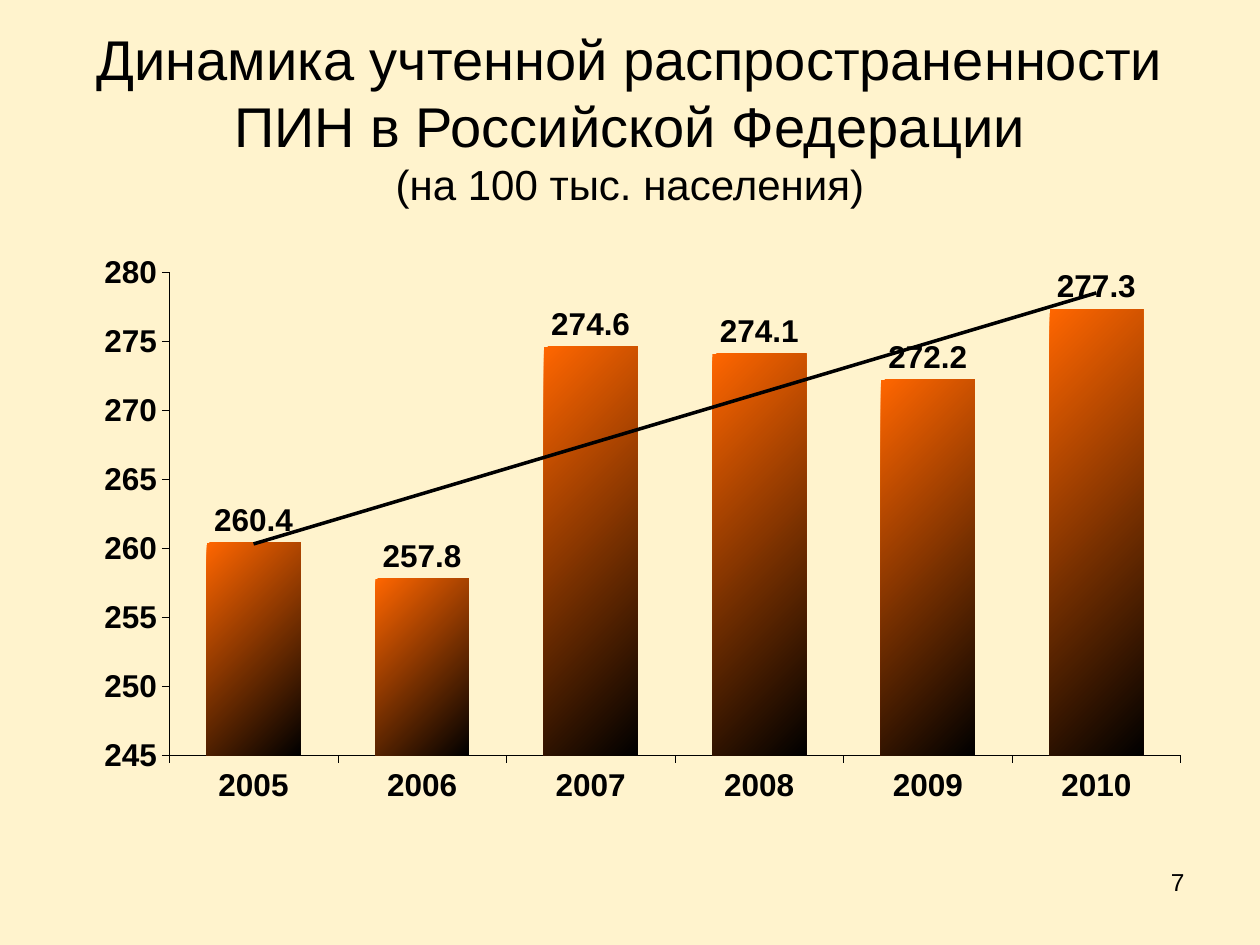
from lxml import etree
from pptx import Presentation
from pptx.chart.data import CategoryChartData
from pptx.dml.color import RGBColor
from pptx.enum.chart import XL_CHART_TYPE, XL_LABEL_POSITION, XL_TICK_MARK
from pptx.enum.text import MSO_ANCHOR, PP_ALIGN
from pptx.oxml import parse_xml
from pptx.util import Inches, Pt

CREAM = RGBColor(0xFF, 0xF3, 0xCD)
BLACK = RGBColor(0, 0, 0)
ORANGE = RGBColor(0xFF, 0x66, 0x00)
FONT = "Arial"
COLUMN = XL_CHART_TYPE.COLUMN_CLUSTERED
ABOVE = XL_LABEL_POSITION.OUTSIDE_END
OUT, NONE = XL_TICK_MARK.OUTSIDE, XL_TICK_MARK.NONE
LEFT, CENTER, RIGHT = PP_ALIGN.LEFT, PP_ALIGN.CENTER, PP_ALIGN.RIGHT
TOP, MIDDLE = MSO_ANCHOR.TOP, MSO_ANCHOR.MIDDLE
NS = ('xmlns:c="http://schemas.openxmlformats.org/drawingml/2006/chart" '
      'xmlns:a="http://schemas.openxmlformats.org/drawingml/2006/main"')


def set_font(font, size, bold=False):
    font.name, font.size, font.bold = FONT, Pt(size), bold
    font.color.rgb = BLACK


def add_text(slide, parts, box, align=LEFT, anchor=TOP):
    """Put (text, size) parts in one paragraph, with a line break between them."""
    frame = slide.shapes.add_textbox(*map(Inches, box)).text_frame
    frame.word_wrap = True
    frame.vertical_anchor = anchor
    para = frame.paragraphs[0]
    para.alignment = align
    for i, (text, size) in enumerate(parts):
        if i:
            para.add_line_break()
        run = para.add_run()
        run.text = text
        set_font(run.font, size)


prs = Presentation()
prs.slide_width, prs.slide_height = Inches(10), Inches(7.5)
slide = prs.slides.add_slide(prs.slide_layouts[6])
slide.background.fill.solid()
slide.background.fill.fore_color.rgb = CREAM

add_text(slide, [("7", 14)], (7.17, 6.83, 2.33, 0.52), align=RIGHT)
add_text(slide,
         [("Динамика учтенной распространенности ПИН в Российской Федерации", 32),
          ("(на 100 тыс. населения)", 24)],
         (0.5, 0.3, 9, 1.25), align=CENTER, anchor=MIDDLE)

# Chart
data = CategoryChartData(number_format="0.0")
data.categories = [str(year) for year in range(2005, 2011)]
data.add_series("Series 1", (260.4, 257.8, 274.6, 274.1, 272.2, 277.3))
box = map(Inches, (0.57, 1.84, 8.89, 4.84))
chart = slide.shapes.add_chart(COLUMN, *box, data).chart
chart.has_legend = False
chart.has_title = False
set_font(chart.font, 18, bold=True)

for axis in (chart.category_axis, chart.value_axis):
    axis.has_major_gridlines = False
    axis.major_tick_mark, axis.minor_tick_mark = OUT, NONE
    axis.format.line.width = Pt(0.25)
    axis.format.line.color.rgb = BLACK
    set_font(axis.tick_labels.font, 18, bold=True)

scale = chart.value_axis
scale.minimum_scale, scale.maximum_scale, scale.major_unit = 245, 280, 5
scale.tick_labels.number_format = "0"
scale.tick_labels.number_format_is_linked = False

plot = chart.plots[0]
plot.gap_width = 80
plot.vary_by_categories = False
bars = plot.series[0]
fill = bars.format.fill
fill.gradient()
fill.gradient_angle = 315
for stop, color, place in zip(fill.gradient_stops, (ORANGE, BLACK), (0, 1)):
    stop.color.rgb = color
    stop.position = place
bars.format.line.fill.background()

labels = bars.data_labels
labels.show_value = True
labels.position = ABOVE
labels.number_format = "0.0"
labels.number_format_is_linked = False
set_font(labels.font, 18, bold=True)

# Linear trend line, placed just before the categories
trend = parse_xml(
    f'<c:trendline {NS}><c:spPr><a:ln w="{Pt(2)}"><a:solidFill>'
    f'<a:srgbClr val="{BLACK}"/></a:solidFill></a:ln></c:spPr>'
    '<c:trendlineType val="linear"/><c:dispRSqr val="0"/>'
    '<c:dispEq val="0"/></c:trendline>')
bars._element.cat.addprevious(trend)

# Fixed inner plot area
area = chart._chartSpace.chart.plotArea
for old in area.xpath("c:layout"):
    area.remove(old)
layout = parse_xml(f'<c:layout {NS}><c:manualLayout/></c:layout>')
for tag, value in (("layoutTarget", "inner"), ("xMode", "edge"), ("yMode", "edge"),
                   ("x", 0.087), ("y", 0.066), ("w", 0.903), ("h", 0.793)):
    etree.SubElement(layout[0], f"{{{layout.nsmap['c']}}}{tag}", val=str(value))
area.insert(0, layout)

prs.save("out.pptx")
